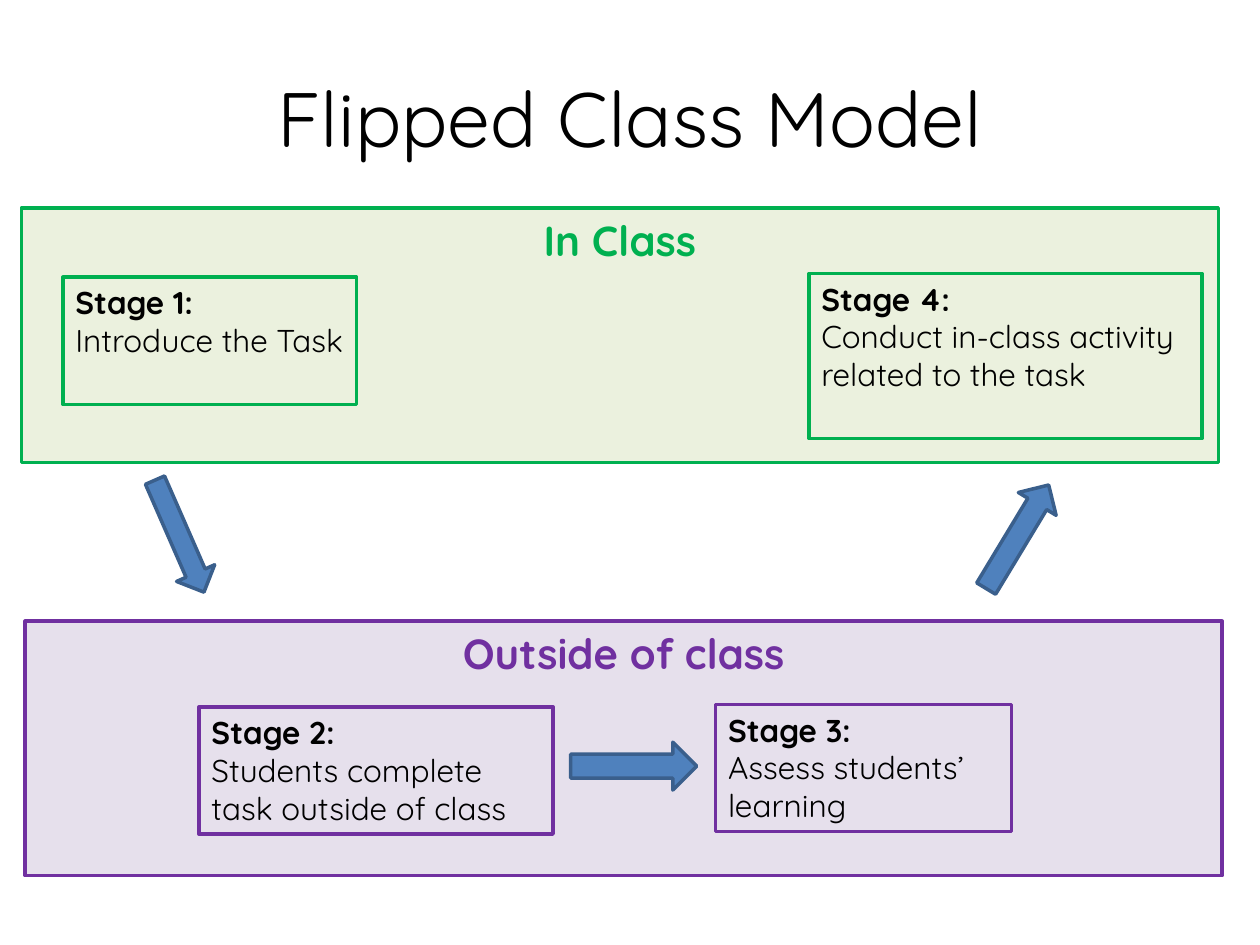
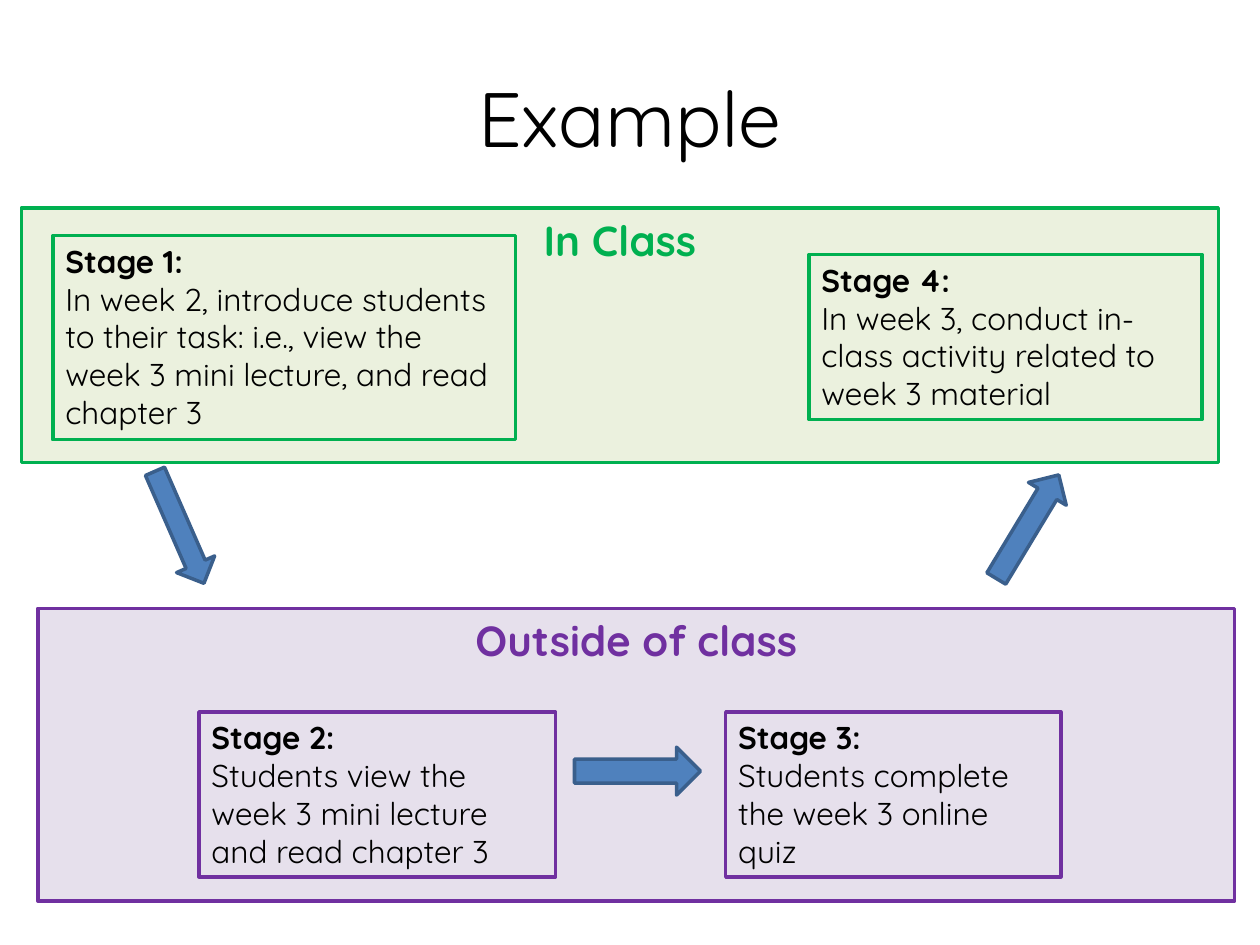
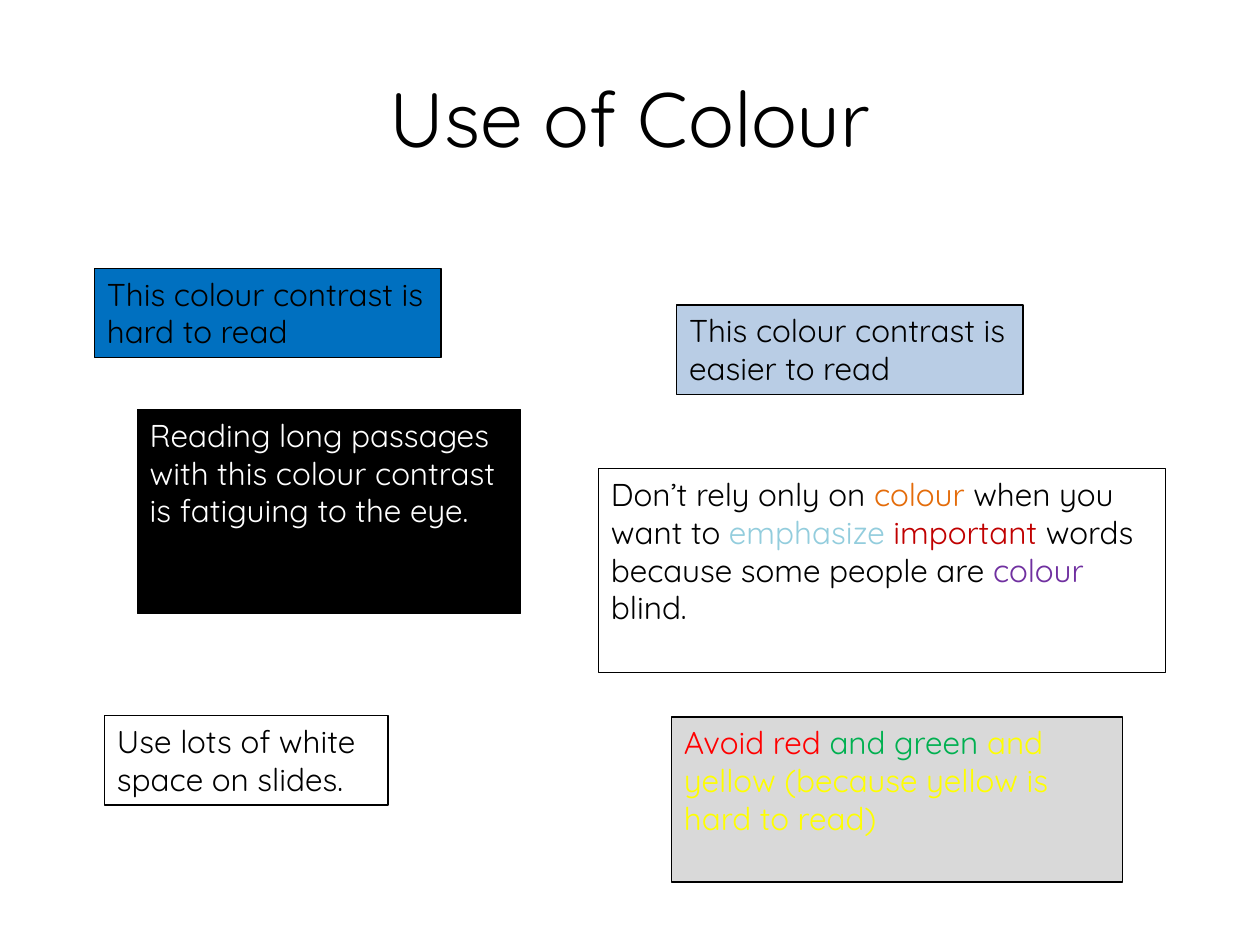
import dataclasses
import typing

import pptx
import pptx.dml.color
import pptx.enum.shapes
import pptx.enum.text
import pptx.presentation
import pptx.shapes.autoshape
import pptx.slide
import pptx.util

Inches = pptx.util.Inches
Pt = pptx.util.Pt
Shape = pptx.enum.shapes.MSO_SHAPE
Align = pptx.enum.text.PP_ALIGN


# Theme: colours, font and type sizes
@dataclasses.dataclass(frozen=True)
class Theme:
    font: str = "Quicksand"
    title_size: float = 44
    heading_size: float = 24
    text_size: float = 18
    frame_line: float = 2
    thin_line: float = 0.75
    black: str = "000000"
    white: str = "FFFFFF"
    green: str = "00B050"
    pale_green: str = "EBF1DE"
    purple: str = "7030A0"
    pale_purple: str = "E6E0EC"
    arrow_blue: str = "4F81BD"
    arrow_edge: str = "3A5F8C"
    strong_blue: str = "0070C0"
    pale_blue: str = "B9CDE5"
    grey: str = "D9D9D9"
    orange: str = "E46C0A"
    aqua: str = "93CDDD"
    dark_red: str = "C00000"
    red: str = "FF0000"
    yellow: str = "FFFF00"


THEME = Theme()


# Records for repeated elements
class Place(typing.NamedTuple):
    left: float
    top: float
    width: float
    height: float


class Span(typing.NamedTuple):
    text: str
    color: str = THEME.black
    bold: bool = False
    size: float = THEME.text_size


class Style(typing.NamedTuple):
    fill: str | None
    line: str
    line_width: float = THEME.frame_line


class Arrow(typing.NamedTuple):
    place: Place
    rotation: float


class Stage(typing.NamedTuple):
    number: int
    text: str
    place: Place
    style: Style


class Panel(typing.NamedTuple):
    heading: str
    place: Place
    style: Style


class Callout(typing.NamedTuple):
    place: Place
    fill: str | None
    spans: list[Span]


class ModelPage(typing.NamedTuple):
    title: str
    panels: list[Panel]
    stages: list[Stage]
    arrows: list[Arrow]


IN_CLASS = Style(THEME.pale_green, THEME.green)
OUTSIDE = Style(THEME.pale_purple, THEME.purple)
ARROW = Style(THEME.arrow_blue, THEME.arrow_edge)
TITLE_PLACE = Place(0.5, 0.3, 9, 1.25)
IN_CLASS_PANEL = Panel("In Class", Place(0.17, 1.65, 9.5, 2.02), IN_CLASS)


def outside_panel(left: float, top: float, height: float) -> Panel:
    return Panel("Outside of class", Place(left, top, 9.5, height), OUTSIDE)


# Drawing functions
def rgb(color: str) -> pptx.dml.color.RGBColor:
    return pptx.dml.color.RGBColor.from_string(color)


def add_span(para: typing.Any, span: Span) -> None:
    run = para.add_run()
    run.text = span.text
    run.font.name = THEME.font
    run.font.size = Pt(span.size)
    run.font.bold = span.bold
    run.font.color.rgb = rgb(span.color)


def add_figure(
    page: pptx.slide.Slide, kind: Shape, place: Place, style: Style
) -> pptx.shapes.autoshape.Shape:
    figure = page.shapes.add_shape(kind, *map(Inches, place))
    figure.shadow.inherit = False
    if style.fill:
        figure.fill.solid()
        figure.fill.fore_color.rgb = rgb(style.fill)
    else:
        figure.fill.background()
    figure.line.color.rgb = rgb(style.line)
    figure.line.width = Pt(style.line_width)
    return figure


def add_box(
    page: pptx.slide.Slide,
    place: Place,
    style: Style,
    paragraphs: list[list[Span]],
    align: Align = Align.LEFT,
) -> None:
    frame = add_figure(page, Shape.RECTANGLE, place, style).text_frame
    frame.word_wrap = True
    frame.auto_size = pptx.enum.text.MSO_AUTO_SIZE.SHAPE_TO_FIT_TEXT
    frame.vertical_anchor = pptx.enum.text.MSO_ANCHOR.TOP
    for index, spans in enumerate(paragraphs):
        para = frame.add_paragraph() if index else frame.paragraphs[0]
        para.alignment = align
        for span in spans:
            add_span(para, span)


def add_panel(page: pptx.slide.Slide, panel: Panel) -> None:
    heading = Span(panel.heading, panel.style.line, True, THEME.heading_size)
    add_box(page, panel.place, panel.style, [[heading]], Align.CENTER)


def add_stage(page: pptx.slide.Slide, stage: Stage) -> None:
    label = Span(f"Stage {stage.number}:", bold=True)
    add_box(page, stage.place, stage.style, [[label], [Span(stage.text)]])


def add_arrow(page: pptx.slide.Slide, arrow: Arrow) -> None:
    figure = add_figure(page, Shape.DOWN_ARROW, arrow.place, ARROW)
    figure.rotation = arrow.rotation


def add_page(deck: pptx.presentation.Presentation, title: str) -> pptx.slide.Slide:
    page = deck.slides.add_slide(deck.slide_layouts.get_by_name("Title Only"))
    box = page.shapes.title
    box.left, box.top, box.width, box.height = map(Inches, TITLE_PLACE)
    box.text_frame.vertical_anchor = pptx.enum.text.MSO_ANCHOR.MIDDLE
    para = box.text_frame.paragraphs[0]
    para.alignment = Align.CENTER
    add_span(para, Span(title, size=THEME.title_size))
    return page


def add_model_page(deck: pptx.presentation.Presentation, model: ModelPage) -> None:
    page = add_page(deck, model.title)
    for panel in model.panels:
        add_panel(page, panel)
    for stage in model.stages:
        add_stage(page, stage)
    for arrow in model.arrows:
        add_arrow(page, arrow)


def add_colour_page(
    deck: pptx.presentation.Presentation, title: str, callouts: list[Callout]
) -> None:
    page = add_page(deck, title)
    for callout in callouts:
        style = Style(callout.fill, THEME.black, THEME.thin_line)
        add_box(page, callout.place, style, [callout.spans])


# Content
def model_arrows(down: Place, across: Place, up: Place) -> list[Arrow]:
    return [Arrow(down, 336.4), Arrow(across, 270), Arrow(up, 211.1)]


MODEL_PAGES = [
    ModelPage(
        "Flipped Class Model",
        [outside_panel(0.2, 4.93, 2.02), IN_CLASS_PANEL],
        [
            Stage(1, "Introduce the Task", Place(0.5, 2.2, 2.33, 1.01), IN_CLASS),
            Stage(2, "Students complete task outside of class",
                  Place(1.58, 5.61, 2.81, 1.01), OUTSIDE),
            Stage(3, "Assess students’ learning",
                  Place(5.68, 5.59, 2.35, 1.01), OUTSIDE),
            Stage(4, "Conduct in-class activity related to the task",
                  Place(6.42, 2.17, 3.12, 1.31), IN_CLASS),
        ],
        model_arrows(
            Place(1.26, 3.77, 0.33, 0.97),
            Place(4.84, 5.58, 0.38, 1),
            Place(7.9, 3.78, 0.35, 0.96),
        ),
    ),
    ModelPage(
        "Example",
        [outside_panel(0.3, 4.83, 2.32), IN_CLASS_PANEL],
        [
            Stage(1, "In week 2, introduce students to their task: i.e., "
                  "view the week 3 mini lecture, and read chapter 3",
                  Place(0.42, 1.87, 3.67, 1.62), IN_CLASS),
            Stage(2, "Students view the week 3 mini lecture and read chapter 3",
                  Place(1.58, 5.65, 2.83, 1.31), OUTSIDE),
            Stage(3, "Students complete the week 3 online quiz",
                  Place(5.76, 5.65, 2.66, 1.31), OUTSIDE),
            Stage(4, "In week 3, conduct in-class activity related to "
                  "week 3 material",
                  Place(6.42, 2.02, 3.12, 1.31), IN_CLASS),
        ],
        model_arrows(
            Place(1.26, 3.7, 0.33, 0.97),
            Place(4.87, 5.62, 0.38, 1),
            Place(7.98, 3.7, 0.35, 0.96),
        ),
    ),
]

COLOUR_CALLOUTS = [
    Callout(Place(0.75, 2.13, 2.75, 0.71), THEME.strong_blue,
            [Span("This colour contrast is hard to read")]),
    Callout(Place(5.37, 2.42, 2.75, 0.71), THEME.pale_blue,
            [Span("This colour contrast is easier to read")]),
    Callout(Place(5.33, 5.69, 3.58, 1.31), THEME.grey, [
        Span("Avoid red", THEME.red),
        Span(" and green ", THEME.green),
        Span("and yellow (because yellow is hard to read)", THEME.yellow),
    ]),
    Callout(Place(1.09, 3.25, 3.04, 1.62), THEME.black, [
        Span("Reading long passages with this colour contrast is "
             "fatiguing to the eye.", THEME.white),
    ]),
    Callout(Place(4.75, 3.72, 4.5, 1.62), None, [
        Span("Don’t rely only on "),
        Span("colour ", THEME.orange),
        Span("when you want to "),
        Span("emphasize ", THEME.aqua),
        Span("important", THEME.dark_red),
        Span(" words because some people are "),
        Span("colour ", THEME.purple),
        Span("blind."),
    ]),
    Callout(Place(0.83, 5.68, 2.25, 0.71), None,
            [Span("Use lots of white space on slides.")]),
]


def main() -> None:
    deck = pptx.Presentation()
    deck.slide_width = Inches(10)
    deck.slide_height = Inches(7.5)
    for model in MODEL_PAGES:
        add_model_page(deck, model)
    add_colour_page(deck, "Use of Colour", COLOUR_CALLOUTS)
    deck.save("out.pptx")


if __name__ == "__main__":
    main()
